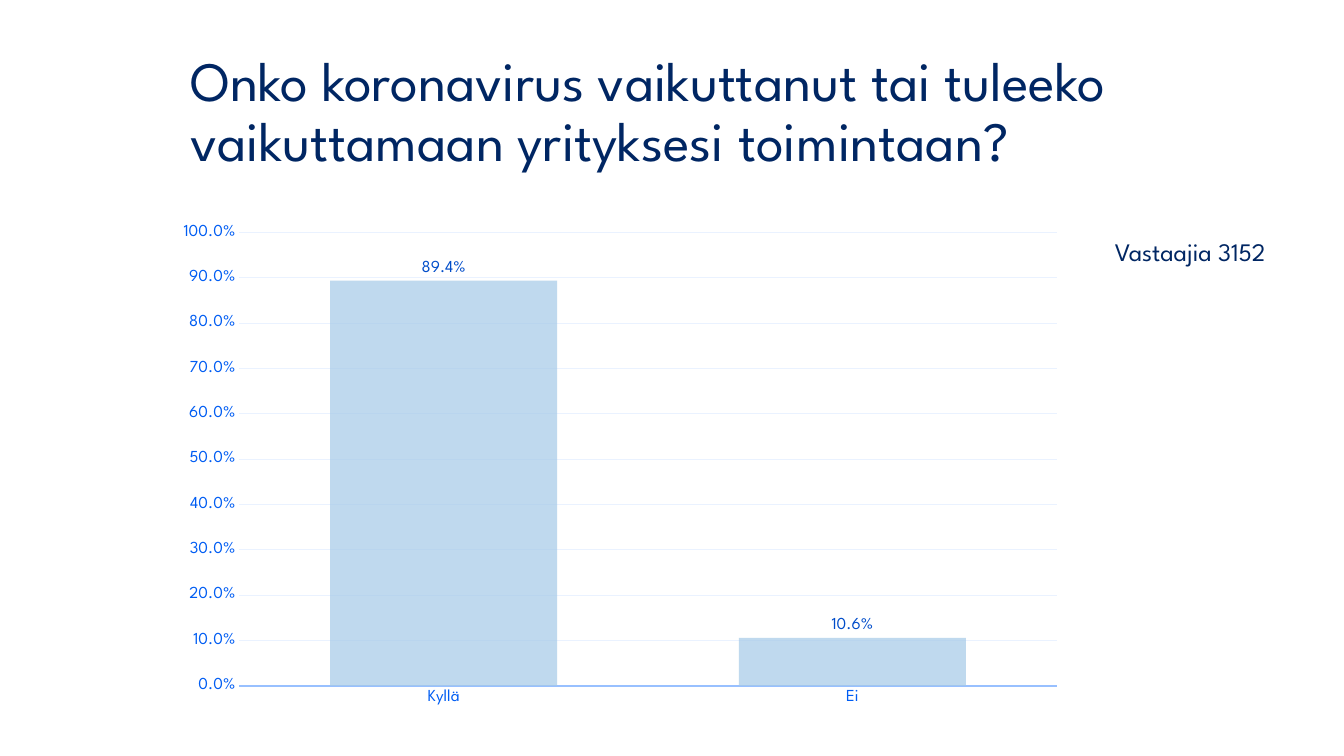
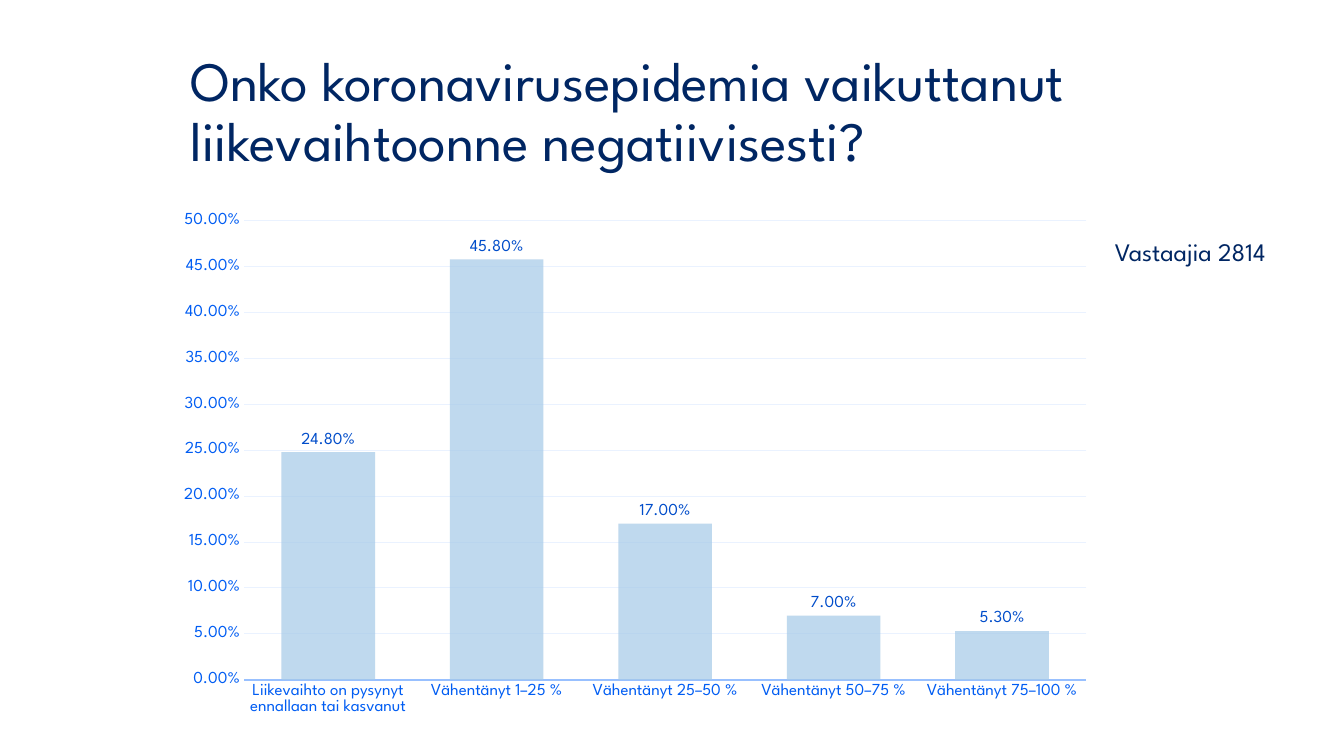
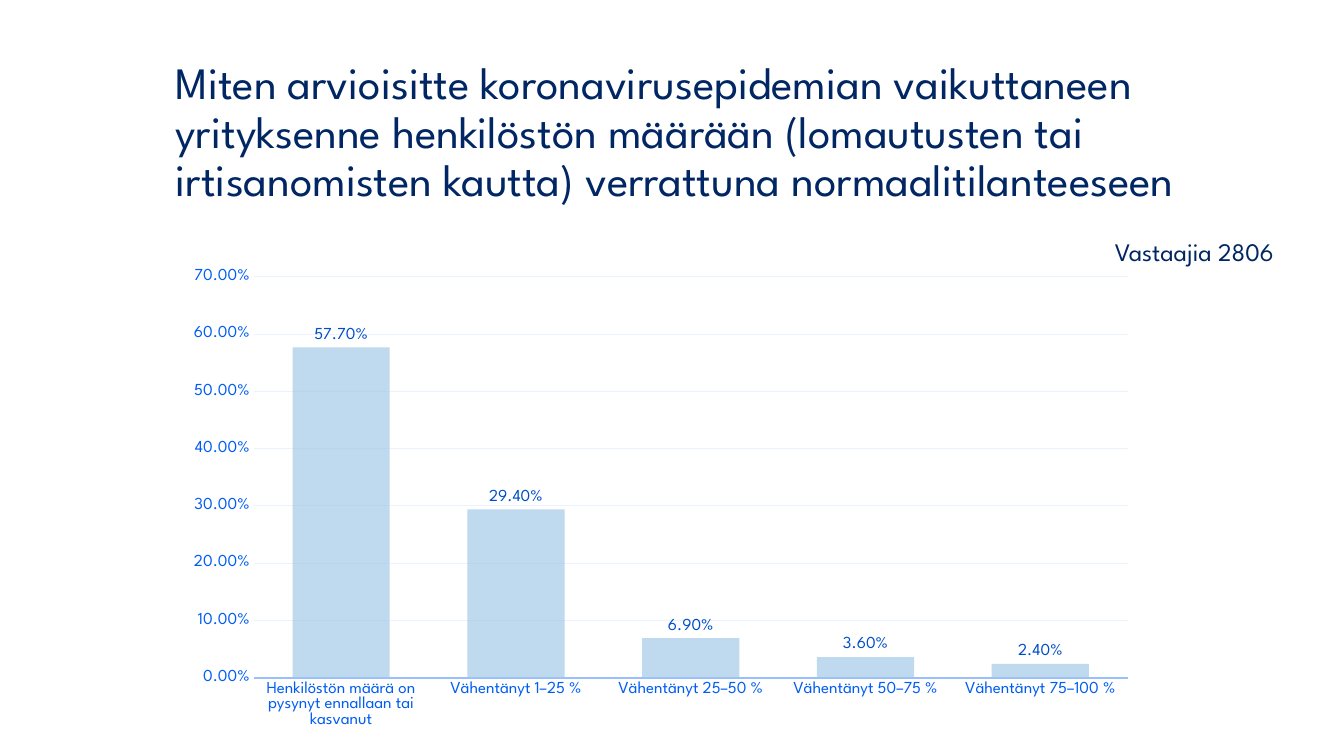
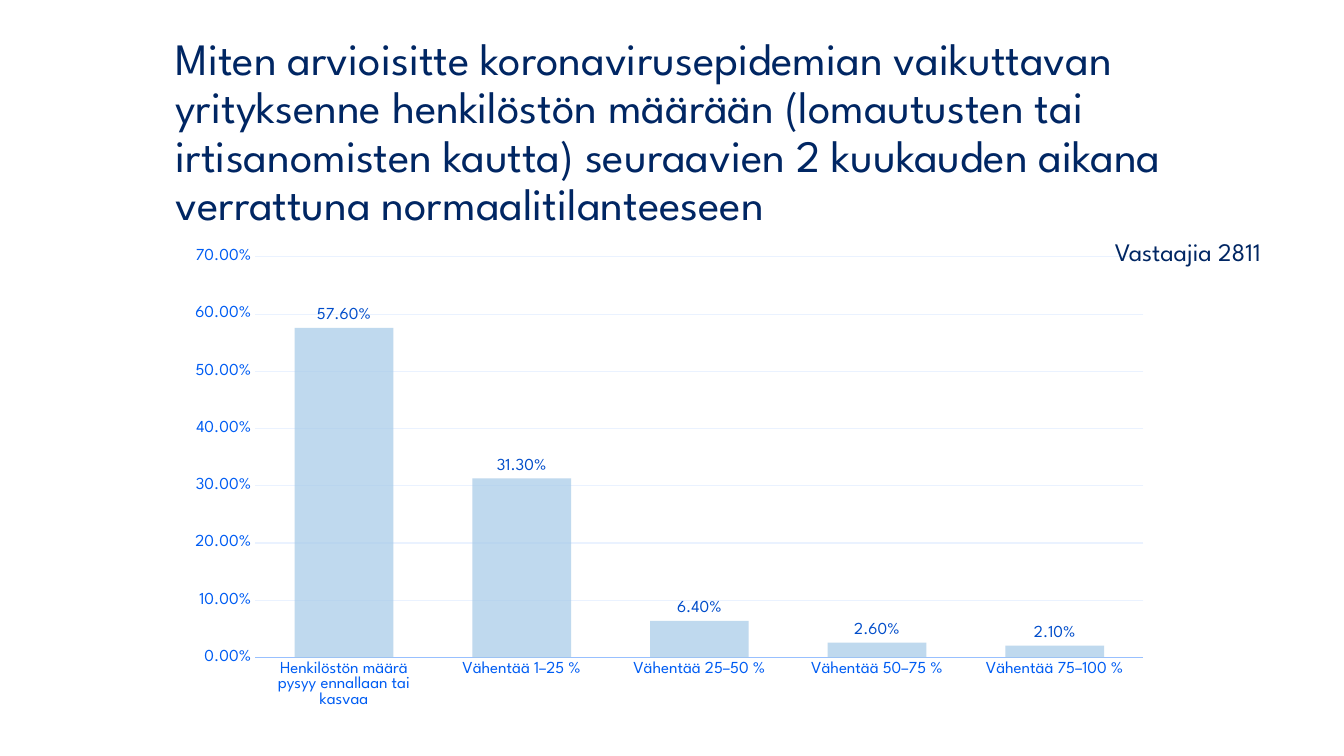
from lxml.etree import SubElement
from pptx import Presentation
from pptx.chart.data import CategoryChartData
from pptx.dml.color import RGBColor
from pptx.enum.chart import XL_CHART_TYPE as ChartType, XL_LABEL_POSITION as LabelPosition, XL_TICK_MARK as TickMark
from pptx.enum.text import MSO_ANCHOR as Anchor, MSO_AUTO_SIZE as AutoSize, PP_ALIGN as Align
from pptx.oxml import parse_xml
from pptx.oxml.ns import nsdecls, qn
from pptx.util import Inches, Pt

FONT = "League Spartan"
NAVY, AXIS_BLUE, LABEL_BLUE = "002663", "005DF3", "004DCA"
BAR, BAR_ALPHA, BASELINE, GRID = "A5C9E7", 70, "98C0FF", "EAF2FF"

WIDE_TITLE = {"box": (1.79, 0.4, 10.94, 1.45), "size": 39.6}
LONG_TITLE = {"box": (1.64, 0.6, 11.35, 1.45), "size": 32}
RESPONDENTS_BOX = (10.96, 2.3, 1.98, 0.4)
CHART_LEFT = 1.64
LONG_PLOT = {"x": 0.09, "y": 0.05, "w": 0.89, "h": 0.8}
BANDS = ("1–25 %", "25–50 %", "50–75 %", "75–100 %")


def changes(first, verb):
    return [first] + [f"{verb} {band}" for band in BANDS]


QUESTIONS = [
    {
        "question": "Onko koronavirus vaikuttanut tai tuleeko vaikuttamaan yrityksesi toimintaan?",
        "style": WIDE_TITLE, "respondents": 3152,
        "answers": ["Kyllä", "Ei"], "shares": [0.894, 0.106],
        "area": (2.13, 9.02, 4.97), "top": 1, "step": 0.1, "format": "0.0%", "plot": None,
    },
    {
        "question": "Onko koronavirusepidemia vaikuttanut liikevaihtoonne negatiivisesti?",
        "style": WIDE_TITLE, "respondents": 2814,
        "answers": changes("Liikevaihto on pysynyt ennallaan tai kasvanut", "Vähentänyt"),
        "shares": [0.248, 0.458, 0.17, 0.07, 0.053],
        "area": (2.01, 9.32, 5.19), "top": 0.5, "step": 0.05, "format": "0.00%", "plot": None,
    },
    {
        "question": "Miten arvioisitte koronavirusepidemian vaikuttaneen yrityksenne henkilöstön "
                    "määrään (lomautusten tai irtisanomisten kautta) verrattuna normaalitilanteeseen",
        "style": LONG_TITLE, "respondents": 2806,
        "answers": changes("Henkilöstön määrä on pysynyt ennallaan tai kasvanut", "Vähentänyt"),
        "shares": [0.577, 0.294, 0.069, 0.036, 0.024],
        "area": (2.5, 9.74, 4.97), "top": 0.7, "step": 0.1, "format": "0.00%", "plot": LONG_PLOT,
    },
    {
        "question": "Miten arvioisitte koronavirusepidemian vaikuttavan yrityksenne henkilöstön "
                    "määrään (lomautusten tai irtisanomisten kautta) seuraavien 2 kuukauden aikana "
                    "verrattuna normaalitilanteeseen",
        "style": LONG_TITLE, "respondents": 2811,
        "answers": changes("Henkilöstön määrä pysyy ennallaan tai kasvaa", "Vähentää"),
        "shares": [0.576, 0.313, 0.064, 0.026, 0.021],
        "area": (2.3, 9.9, 4.97), "top": 0.7, "step": 0.1, "format": "0.00%", "plot": LONG_PLOT,
    },
]


def color(hex_value):
    return RGBColor.from_string(hex_value)


def apply(target, values):
    for name, value in values.items():
        setattr(target, name, value)


def set_font(font, size, hex_value):
    apply(font, {"name": FONT, "size": Pt(size), "bold": False})
    font.color.rgb = color(hex_value)


def set_line(line, hex_value, width):
    line.color.rgb = color(hex_value)
    line.width = Pt(width)


def inches(box):
    return [Inches(length) for length in box]


def add_question(slide, text, style):
    title = slide.shapes.title
    apply(title, dict(zip(("left", "top", "width", "height"), inches(style["box"]))))
    frame = title.text_frame
    frame.text = text
    apply(frame, {"word_wrap": True, "auto_size": AutoSize.NONE, "vertical_anchor": Anchor.MIDDLE})
    paragraph = frame.paragraphs[0]
    apply(paragraph, {"alignment": Align.LEFT, "line_spacing": 0.9})
    set_font(paragraph.runs[0].font, style["size"], NAVY)


def add_respondents(slide, count):
    frame = slide.shapes.add_textbox(*inches(RESPONDENTS_BOX)).text_frame
    frame.text = f"Vastaajia {count}"
    apply(frame, {"word_wrap": False, "auto_size": AutoSize.SHAPE_TO_FIT_TEXT})
    set_font(frame.paragraphs[0].runs[0].font, 18, NAVY)


def place_plot(chart, plot):
    area = chart.element.find(".//" + qn("c:plotArea"))
    for layout in area.findall(qn("c:layout")):
        area.remove(layout)
    rules = [("layoutTarget", "inner"), ("xMode", "edge"), ("yMode", "edge"), *plot.items()]
    parts = "".join(f'<c:{tag} val="{value}"/>' for tag, value in rules)
    area.insert(0, parse_xml(f'<c:layout {nsdecls("c")}><c:manualLayout>{parts}</c:manualLayout></c:layout>'))


def add_answers(slide, item):
    data = CategoryChartData(number_format=item["format"])
    data.categories = item["answers"]
    data.add_series("Series 1", item["shares"])
    top, width, height = item["area"]
    chart = slide.shapes.add_chart(
        ChartType.COLUMN_CLUSTERED, *inches((CHART_LEFT, top, width, height)), data).chart
    apply(chart, {"has_title": False, "has_legend": False})
    set_font(chart.font, 10, NAVY)

    answers, scale = chart.category_axis, chart.value_axis
    for axis in (answers, scale):
        apply(axis, {"major_tick_mark": TickMark.NONE, "minor_tick_mark": TickMark.NONE})
        set_font(axis.tick_labels.font, 12, AXIS_BLUE)
    set_line(answers.format.line, BASELINE, 1.25)
    apply(scale, {"minimum_scale": 0, "maximum_scale": item["top"],
                  "major_unit": item["step"], "has_major_gridlines": True})
    scale.format.line.fill.background()
    set_line(scale.major_gridlines.format.line, GRID, 0.75)
    number_format = {"number_format": item["format"], "number_format_is_linked": False}
    apply(scale.tick_labels, number_format)

    bars = chart.plots[0]
    apply(bars, {"gap_width": 80, "overlap": 25, "vary_by_categories": False, "has_data_labels": True})
    apply(bars.data_labels, {"show_value": True, "position": LabelPosition.OUTSIDE_END, **number_format})
    set_font(bars.data_labels.font, 12, LABEL_BLUE)
    shares = bars.series[0]
    shares.invert_if_negative = False
    shares.format.fill.solid()
    shares.format.fill.fore_color.rgb = color(BAR)
    fill = shares.format.fill.fore_color
    shade = chart.element.find(".//" + qn("c:ser")).find(qn("c:spPr")).find(".//" + qn("a:srgbClr"))
    SubElement(shade, qn("a:alpha"), val=str(BAR_ALPHA * 1000))
    if item["plot"]:
        place_plot(chart, item["plot"])


def main():
    deck = Presentation()
    apply(deck, {"slide_width": Inches(13.33), "slide_height": Inches(7.5)})
    for item in QUESTIONS:
        slide = deck.slides.add_slide(deck.slide_layouts[5])
        add_question(slide, item["question"], item["style"])
        add_answers(slide, item)
        add_respondents(slide, item["respondents"])
    deck.save("out.pptx")


if __name__ == "__main__":
    main()
